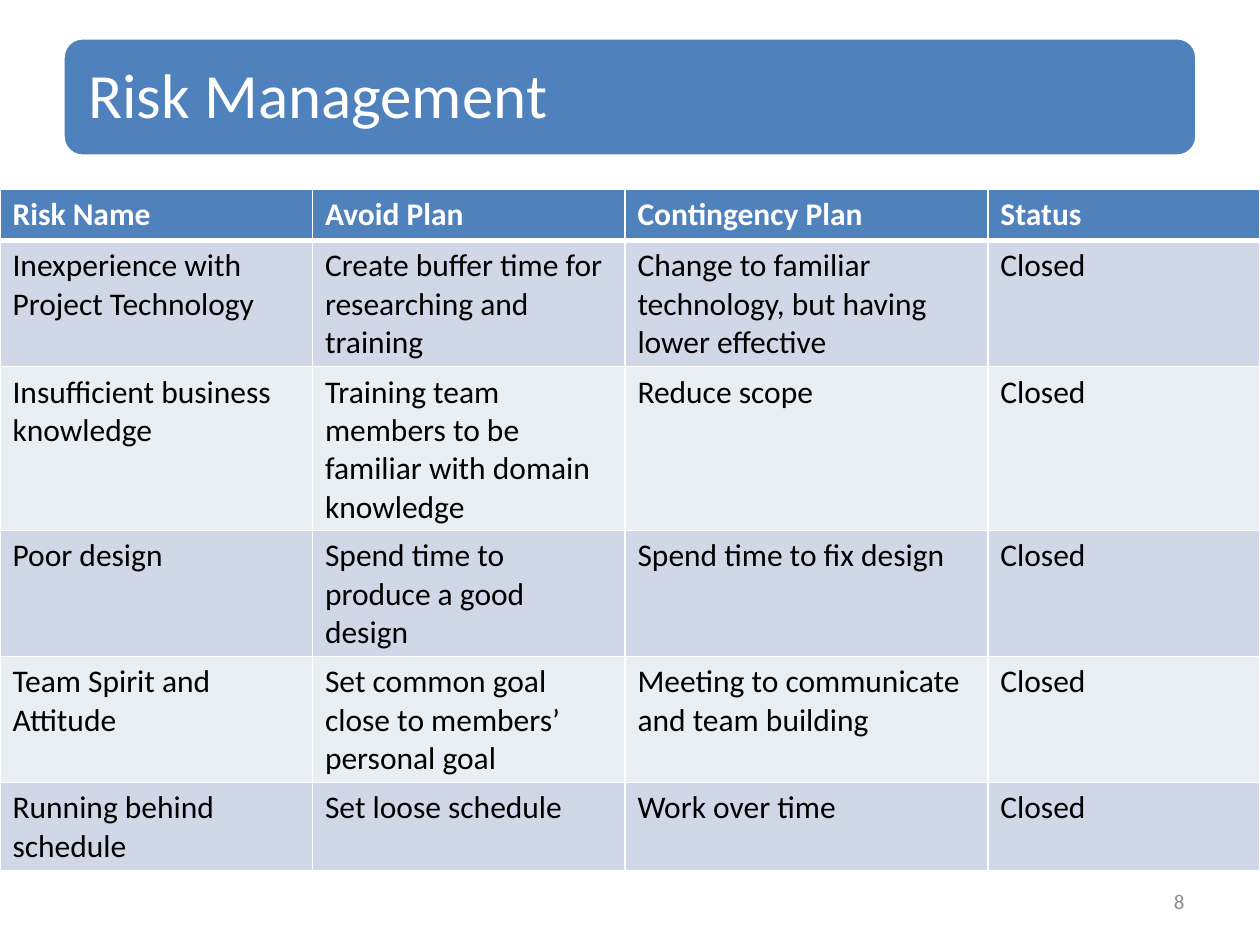
from lxml import etree
from pptx import Presentation
from pptx.dml.color import RGBColor
from pptx.enum.shapes import MSO_SHAPE
from pptx.enum.text import MSO_ANCHOR, MSO_AUTO_SIZE, PP_ALIGN
from pptx.oxml.ns import qn
from pptx.util import Inches, Pt

ROUNDED = MSO_SHAPE.ROUNDED_RECTANGLE
MIDDLE = MSO_ANCHOR.MIDDLE
NO_FIT = MSO_AUTO_SIZE.NONE
LEFT, RIGHT = PP_ALIGN.LEFT, PP_ALIGN.RIGHT
TITLE_ONLY = 5
FONT = "Calibri"
COLORS = {
    "accent": "4F81BD",
    "white": "FFFFFF",
    "black": "000000",
    "number": "8C8C8C",
    "band_dark": "D0D8E8",
    "band_light": "E9EDF4",
}

COLUMN_WIDTHS = [2.48, 2.48, 2.88, 2.16]
ROW_HEIGHT = 0.41
RISKS = [
    ("Risk Name", "Avoid Plan", "Contingency Plan", "Status"),
    ("Inexperience with Project Technology",
     "Create buffer time for researching and training",
     "Change to familiar technology, but having lower effective", "Closed"),
    ("Insufficient business knowledge",
     "Training team members to be familiar with domain knowledge",
     "Reduce scope", "Closed"),
    ("Poor design", "Spend time to produce a good design",
     "Spend time to fix design", "Closed"),
    ("Team Spirit and Attitude",
     "Set common goal close to members’ personal goal",
     "Meeting to communicate and team building", "Closed"),
    ("Running behind schedule", "Set loose schedule", "Work over time", "Closed"),
]


def color(name):
    return RGBColor.from_string(COLORS[name])


def write(frame, text, size=18, ink="black", bold=False, align=LEFT, spacing=None):
    para = frame.paragraphs[0]
    para.alignment = align
    if spacing:
        para.line_spacing = spacing
    span = para.add_run()
    span.text = text
    span.font.name = FONT
    span.font.size = Pt(size)
    span.font.bold = bold
    span.font.color.rgb = color(ink)


def add_title(page, text):
    # The banner goes behind the title placeholder
    banner = page.shapes.add_shape(
        ROUNDED, Inches(0.5), Inches(0.3), Inches(9), Inches(0.94))
    banner.shadow.inherit = False
    banner.fill.solid()
    banner.fill.fore_color.rgb = color("accent")
    banner.line.color.rgb = color("white")
    banner.line.width = Pt(2)

    title = page.shapes.title
    title.element.addprevious(banner.element)
    title.left, title.top = Inches(0.55), Inches(0.35)
    title.width, title.height = Inches(8.91), Inches(0.85)
    frame = title.text_frame
    frame.word_wrap = True
    frame.auto_size = NO_FIT
    frame.vertical_anchor = MIDDLE
    frame.margin_left = frame.margin_right = Inches(0.15)
    frame.margin_top = frame.margin_bottom = Inches(0.15)
    write(frame, text, size=36, ink="white", spacing=0.9)


def set_borders(cell, top=1, bottom=1):
    properties = cell._tc.get_or_add_tcPr()
    for side, width in (("L", 1), ("R", 1), ("T", top), ("B", bottom)):
        line = etree.SubElement(properties, qn(f"a:ln{side}"), w=str(Pt(width)))
        fill = etree.SubElement(line, qn("a:solidFill"))
        etree.SubElement(fill, qn("a:srgbClr"), val=COLORS["white"])


def add_risk_table(page):
    table = page.shapes.add_table(
        len(RISKS), len(COLUMN_WIDTHS), Inches(0), Inches(1.5),
        Inches(sum(COLUMN_WIDTHS)), Inches(ROW_HEIGHT * len(RISKS))).table
    for column, width in zip(table.columns, COLUMN_WIDTHS):
        column.width = Inches(width)

    for row, texts in enumerate(RISKS):
        table.rows[row].height = Inches(ROW_HEIGHT)
        header = row == 0
        band = "accent" if header else "band_dark" if row % 2 else "band_light"
        for column, text in enumerate(texts):
            cell = table.cell(row, column)
            # A thicker rule separates the header from the first risk
            set_borders(cell, top=3 if row == 1 else 1, bottom=3 if header else 1)
            cell.fill.solid()
            cell.fill.fore_color.rgb = color(band)
            write(cell.text_frame, text, ink="white" if header else "black",
                  bold=header)


def add_page_number(page, text):
    box = page.shapes.add_textbox(
        Inches(7.17), Inches(6.95), Inches(2.33), Inches(0.4))
    box.text_frame.word_wrap = True
    box.text_frame.vertical_anchor = MIDDLE
    write(box.text_frame, text, size=12, ink="number", align=RIGHT)


def main():
    deck = Presentation()
    deck.slide_width, deck.slide_height = Inches(10), Inches(7.5)
    page = deck.slides.add_slide(deck.slide_layouts[TITLE_ONLY])
    add_title(page, "Risk Management")
    add_page_number(page, "8")
    add_risk_table(page)
    deck.save("out.pptx")


if __name__ == "__main__":
    main()
